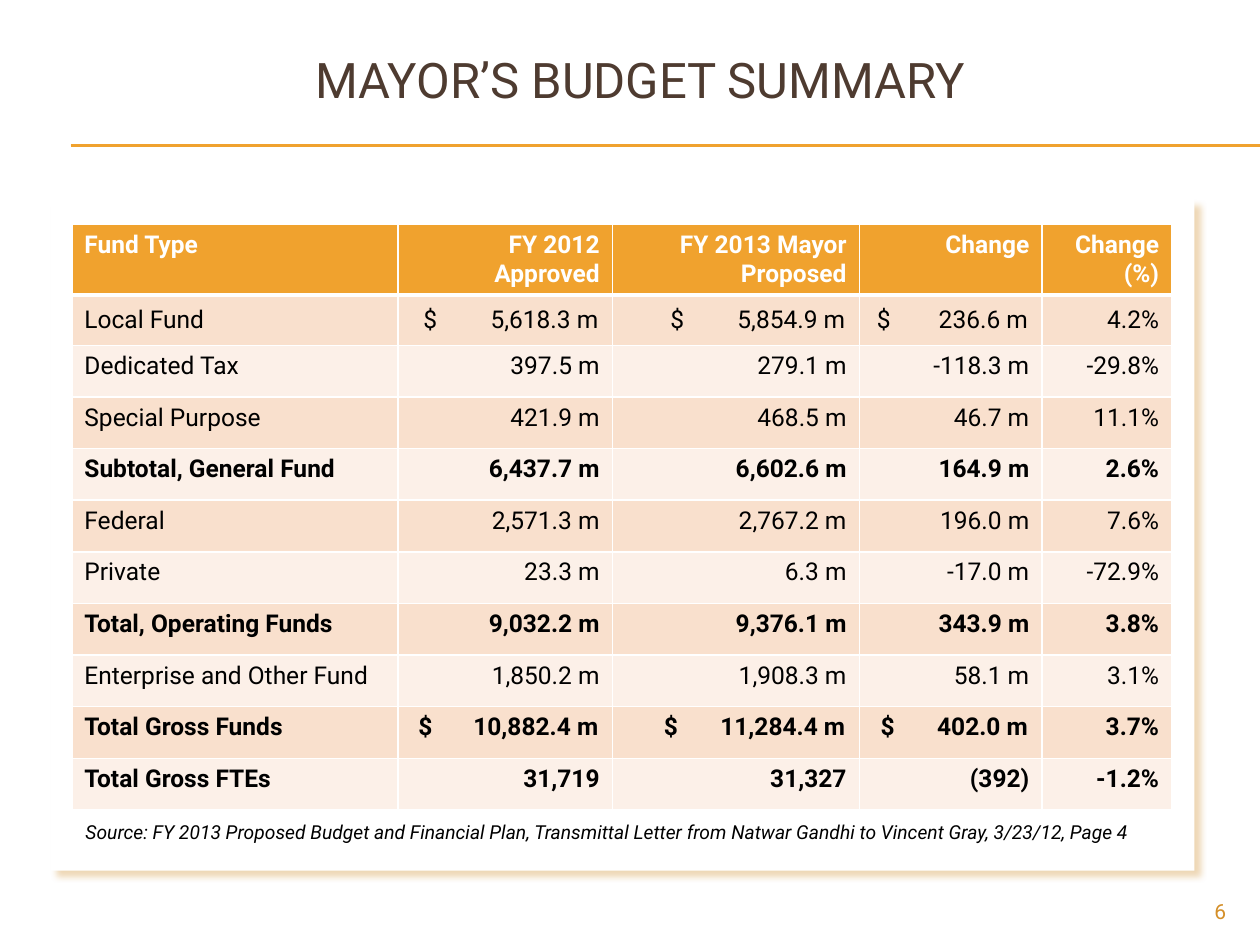
from lxml import etree
from pptx import Presentation
from pptx.dml.color import RGBColor
from pptx.enum.shapes import MSO_CONNECTOR, MSO_SHAPE
from pptx.enum.text import MSO_ANCHOR, PP_ALIGN
from pptx.oxml.ns import qn
from pptx.util import Inches, Pt

LEFT, CENTER, RIGHT = PP_ALIGN.LEFT, PP_ALIGN.CENTER, PP_ALIGN.RIGHT
TOP, MIDDLE = MSO_ANCHOR.TOP, MSO_ANCHOR.MIDDLE
STRAIGHT, RECT = MSO_CONNECTOR.STRAIGHT, MSO_SHAPE.RECTANGLE
FONT = "Roboto"
PAD = 0.1
COLORS = {
    "title": "4E3B30", "accent": "F0A22E", "number": "D48F29",
    "shadow": "C87D0E", "dark_band": "F9E0CD", "light_band": "FCF0E8",
    "white": "FFFFFF", "black": "000000",
}
COLUMNS = [2.59, 1.7, 1.96, 1.45, 1.03]
HEADER = ["Fund Type", "FY 2012\nApproved", "FY 2013 Mayor Proposed", "Change", "Change (%)"]
FUNDS = [
    ["Local Fund", "$\t5,618.3 m", "$\t5,854.9 m", "$\t236.6 m", "4.2%"],
    ["Dedicated Tax", "397.5 m", "279.1 m", "-118.3 m", "-29.8%"],
    ["Special Purpose", "421.9 m", "468.5 m", "46.7 m", "11.1%"],
    ["Subtotal, General Fund", "6,437.7 m", "6,602.6 m", "164.9 m", "2.6%"],
    ["Federal", "2,571.3 m", "2,767.2 m", "196.0 m", "7.6%"],
    ["Private", "23.3 m", "6.3 m", "-17.0 m", "-72.9%"],
    ["Total, Operating Funds", "9,032.2 m", "9,376.1 m", "343.9 m", "3.8%"],
    ["Enterprise and Other Fund", "1,850.2 m", "1,908.3 m", "58.1 m", "3.1%"],
    ["Total Gross Funds", "$\t10,882.4 m", "$\t11,284.4 m", "$\t402.0 m", "3.7%"],
    ["Total Gross FTEs", "31,719", "31,327", "(392)", "-1.2%"],
]
DOLLAR_INSETS = {False: [0.2, 0.46, 0.14], True: [0.16, 0.41, 0.17]}


def rgb(name):
    return RGBColor.from_string(COLORS[name])


def inches(box):
    return [Inches(v) for v in box]


def add_run(p, text, size, color, bold=False, italic=False):
    r = p.add_run()
    r.text = text
    r.font.name = FONT
    r.font.size = Pt(size)
    r.font.bold = bold
    r.font.italic = italic
    r.font.color.rgb = rgb(color)


def add_title(s, box, text):
    sp = s.shapes.title
    sp.left, sp.top, sp.width, sp.height = inches(box)
    tf = sp.text_frame
    tf.vertical_anchor = MIDDLE
    p = tf.paragraphs[0]
    p.alignment = CENTER
    add_run(p, text, 28, "title")


def add_rules(s, box):
    x, y, w, h = box
    for line_y in (y, y + h):
        line = s.shapes.add_connector(STRAIGHT, *inches([x, line_y, x + w, line_y]))
        line.line.color.rgb = rgb("accent")
        line.line.width = Pt(0.75)
        etree.SubElement(line._element.spPr, qn("a:effectLst"))


def add_panel(s, box):
    sp = s.shapes.add_shape(RECT, *inches(box))
    sp.fill.solid()
    sp.fill.fore_color.rgb = rgb("white")
    sp.line.fill.background()
    sp.shadow.inherit = False
    effects = sp._element.spPr.find(qn("a:effectLst"))
    shadow = etree.SubElement(effects, qn("a:outerShdw"), blurRad=str(Pt(4)),
                              dist=str(Pt(6)), dir="2700000", algn="tl", rotWithShape="0")
    color = etree.SubElement(shadow, qn("a:srgbClr"), val=COLORS["shadow"])
    etree.SubElement(color, qn("a:alpha"), val="30000")


def set_borders(cell, bottom):
    tcPr = cell._tc.get_or_add_tcPr()
    widths = {"a:lnL": 1, "a:lnR": 1, "a:lnT": 1, "a:lnB": bottom}
    for i, (tag, width) in enumerate(widths.items()):
        ln = etree.Element(qn(tag), w=str(Pt(width)))
        fill = etree.SubElement(ln, qn("a:solidFill"))
        etree.SubElement(fill, qn("a:srgbClr"), val=COLORS["white"])
        tcPr.insert(i, ln)


def add_right_tab(p, position):
    tabs = etree.SubElement(p._p.get_or_add_pPr(), qn("a:tabLst"))
    etree.SubElement(tabs, qn("a:tab"), pos=str(Inches(position)), algn="r")


def fill_cell(cell, text, col, fill, color, bold, bottom=1):
    cell.fill.solid()
    cell.fill.fore_color.rgb = rgb(fill)
    set_borders(cell, bottom)
    tf = cell.text_frame
    for i, line in enumerate(text.split("\n")):
        p = tf.add_paragraph() if i else tf.paragraphs[0]
        p.alignment = RIGHT if col else LEFT
        if "\t" in line:
            inset = DOLLAR_INSETS[bold][col - 1]
            cell.margin_left = Inches(inset)
            p.alignment = LEFT
            add_right_tab(p, COLUMNS[col] - inset - PAD - 0.01)
        add_run(p, line, 14, color, bold)


def add_fund_table(s, box):
    row_count = len(FUNDS) + 1
    table = s.shapes.add_table(row_count, len(COLUMNS), *inches(box)).table
    table.horz_banding = False
    for column, width in zip(table.columns, COLUMNS):
        column.width = Inches(width)
    for i, row in enumerate(table.rows):
        row.height = Inches(0.4 if i == 1 else 0.41)
    for col, text in enumerate(HEADER):
        fill_cell(table.cell(0, col), text, col, "accent", "white", True, 3)
    for i, values in enumerate(FUNDS, 1):
        band = "dark_band" if i % 2 else "light_band"
        bold = "otal" in values[0]
        for col, text in enumerate(values):
            cell = table.cell(i, col)
            cell.vertical_anchor = MIDDLE if i == 1 else TOP
            fill_cell(cell, text, col, band, "black", bold)


def add_caption(s, box, text, size, color, align=LEFT, italic=False):
    tf = s.shapes.add_textbox(*inches(box)).text_frame
    tf.word_wrap = True
    p = tf.paragraphs[0]
    p.alignment = align
    add_run(p, text, size, color, italic=italic)


def main():
    prs = Presentation()
    prs.slide_width, prs.slide_height = Inches(10), Inches(7.5)
    s = prs.slides.add_slide(prs.slide_layouts[5])
    add_rules(s, (0.56, 1.15, 9.44, 0.01))
    add_panel(s, (0.4, 1.58, 9.08, 5.33))
    add_title(s, (0.33, 0.17, 9.5, 0.92), "MAYOR’S BUDGET SUMMARY")
    add_fund_table(s, (0.57, 1.78, sum(COLUMNS), 4.62))
    add_caption(s, (9, 7.08, 0.83, 0.27), "6", 12, "number", RIGHT)
    add_caption(s, (0.58, 6.46, 8.9, 0.29),
                "Source: FY 2013 Proposed Budget and Financial Plan, Transmittal Letter "
                "from Natwar Gandhi to Vincent Gray, 3/23/12, Page 4", 11, "black", italic=True)
    prs.save("out.pptx")


if __name__ == "__main__":
    main()
